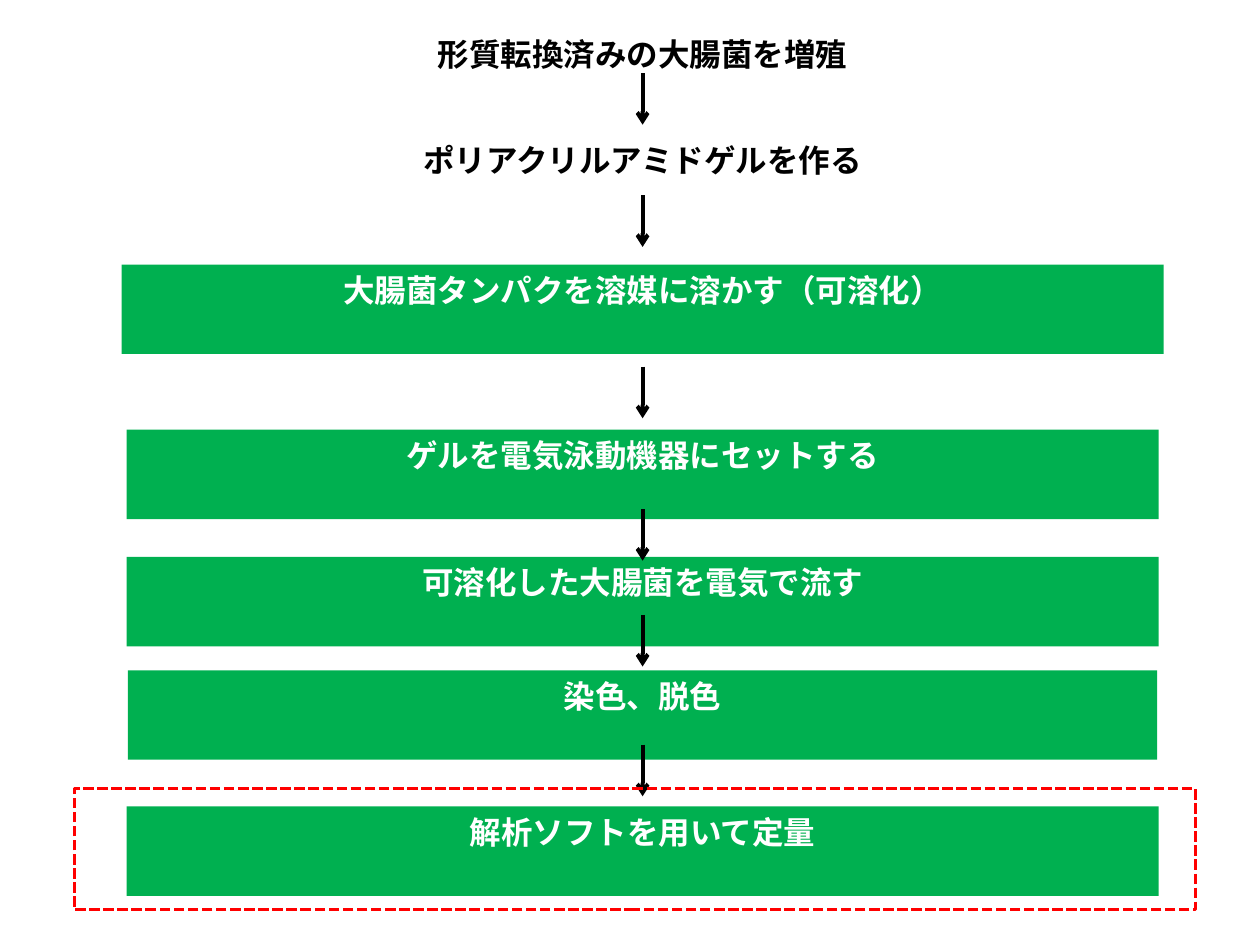
from typing import NamedTuple, Optional

from lxml.etree import SubElement
from pptx import Presentation
from pptx.dml.color import RGBColor
from pptx.enum.dml import MSO_LINE
from pptx.enum.shapes import MSO_CONNECTOR, MSO_SHAPE
from pptx.enum.text import MSO_ANCHOR, PP_ALIGN
from pptx.oxml.ns import qn
from pptx.util import Inches, Pt

GREEN = RGBColor(0x00, 0xB0, 0x50)
RED = RGBColor(0xFF, 0x00, 0x00)
WHITE = RGBColor(0xFF, 0xFF, 0xFF)
BLACK = RGBColor(0x00, 0x00, 0x00)

CENTER = 5.1
ARROW_LENGTH = 0.41


class Step(NamedTuple):
    text: str
    top: float
    width: float = 8.19
    height: float = 0.71
    fill: Optional[RGBColor] = GREEN
    color: RGBColor = WHITE


STEPS = [
    Step("形質転換済みの大腸菌を増殖", 0.23, 8.35, 0.4, None, BLACK),
    Step("ポリアクリルアミドゲルを作る", 1.07, 9.8, 0.4, WHITE, BLACK),
    Step("大腸菌タンパクを溶媒に溶かす（可溶化）", 2.1, 8.27),
    Step("ゲルを電気泳動機器にセットする", 3.41),
    Step("可溶化した大腸菌を電気で流す", 4.42),
    Step("染色、脱色", 5.32, 8.17),
    Step("解析ソフトを用いて定量", 6.4),
]
ARROW_TOPS = [0.58, 1.55, 2.91, 4.04, 4.88, 5.91]


def add_step(s, step: Step) -> None:
    box = (Inches(CENTER - step.width / 2), Inches(step.top),
           Inches(step.width), Inches(step.height))
    if step.fill is None:
        sp = s.shapes.add_textbox(*box)
    else:
        sp = s.shapes.add_shape(MSO_SHAPE.RECTANGLE, *box)
        sp.shadow.inherit = False
        sp.fill.solid()
        sp.fill.fore_color.rgb = step.fill
        sp.line.fill.background()
    tf = sp.text_frame
    tf.word_wrap = True
    tf.vertical_anchor = MSO_ANCHOR.TOP
    p = tf.paragraphs[0]
    p.text = step.text
    p.alignment = PP_ALIGN.CENTER
    p.font.name = "Calibri"
    p.font.size = Pt(18)
    p.font.bold = True
    p.font.color.rgb = step.color


def add_arrow(s, top: float) -> None:
    x = Inches(CENTER)
    arrow = s.shapes.add_connector(MSO_CONNECTOR.STRAIGHT, x, Inches(top),
                                   x, Inches(top + ARROW_LENGTH))
    arrow.line.color.rgb = BLACK
    arrow.line.width = Pt(2.25)
    SubElement(arrow.line._get_or_add_ln(), qn("a:tailEnd"), type="arrow")
    SubElement(arrow._element.spPr, qn("a:effectLst"))


def add_highlight(s) -> None:
    frame = s.shapes.add_shape(MSO_SHAPE.RECTANGLE, Inches(0.59), Inches(6.26),
                               Inches(8.9), Inches(0.96))
    frame.shadow.inherit = False
    frame.fill.background()
    frame.line.color.rgb = RED
    frame.line.width = Pt(2)
    frame.line.dash_style = MSO_LINE.SQUARE_DOT


def main() -> None:
    prs = Presentation()
    prs.slide_width, prs.slide_height = Inches(10), Inches(7.5)
    s = prs.slides.add_slide(prs.slide_layouts[6])

    # Procedure steps
    for step in STEPS:
        add_step(s, step)

    # Arrows between the steps
    for top in ARROW_TOPS:
        add_arrow(s, top)

    # Dashed frame around the final step
    add_highlight(s)

    prs.save("out.pptx")


if __name__ == "__main__":
    main()
